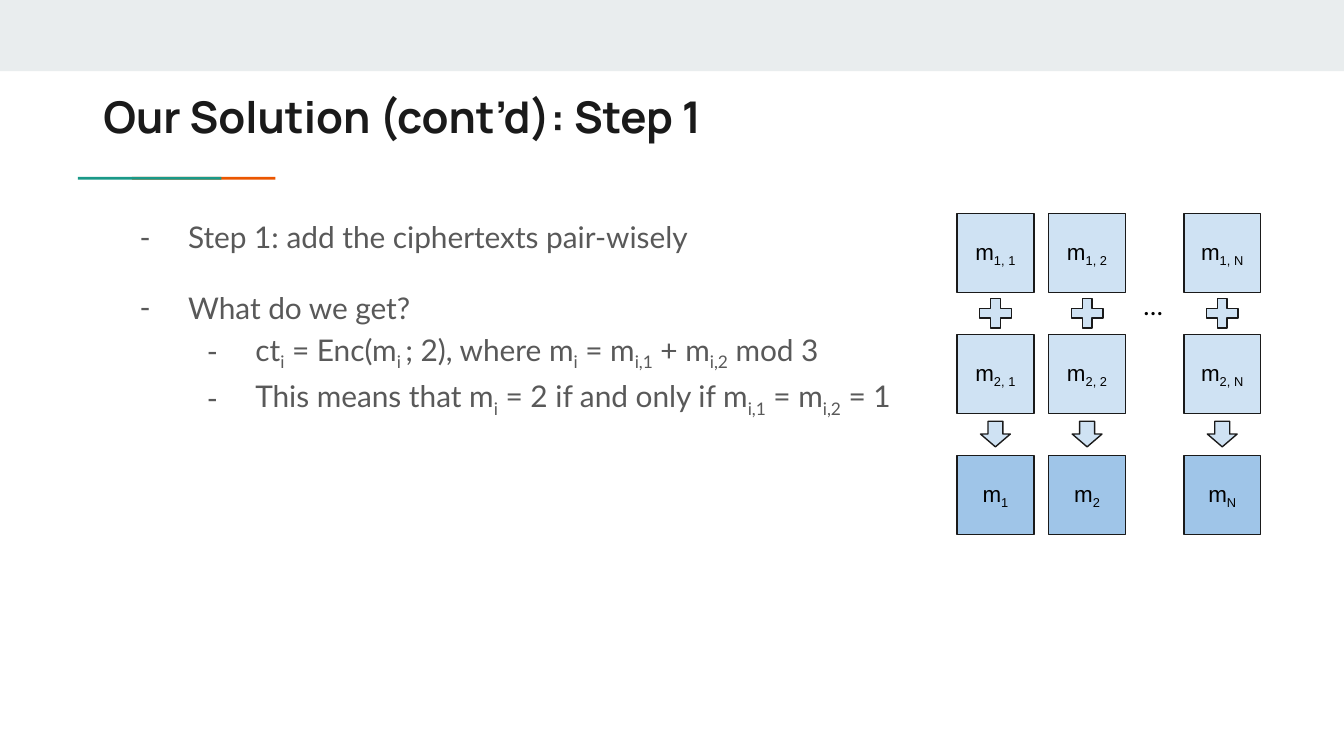
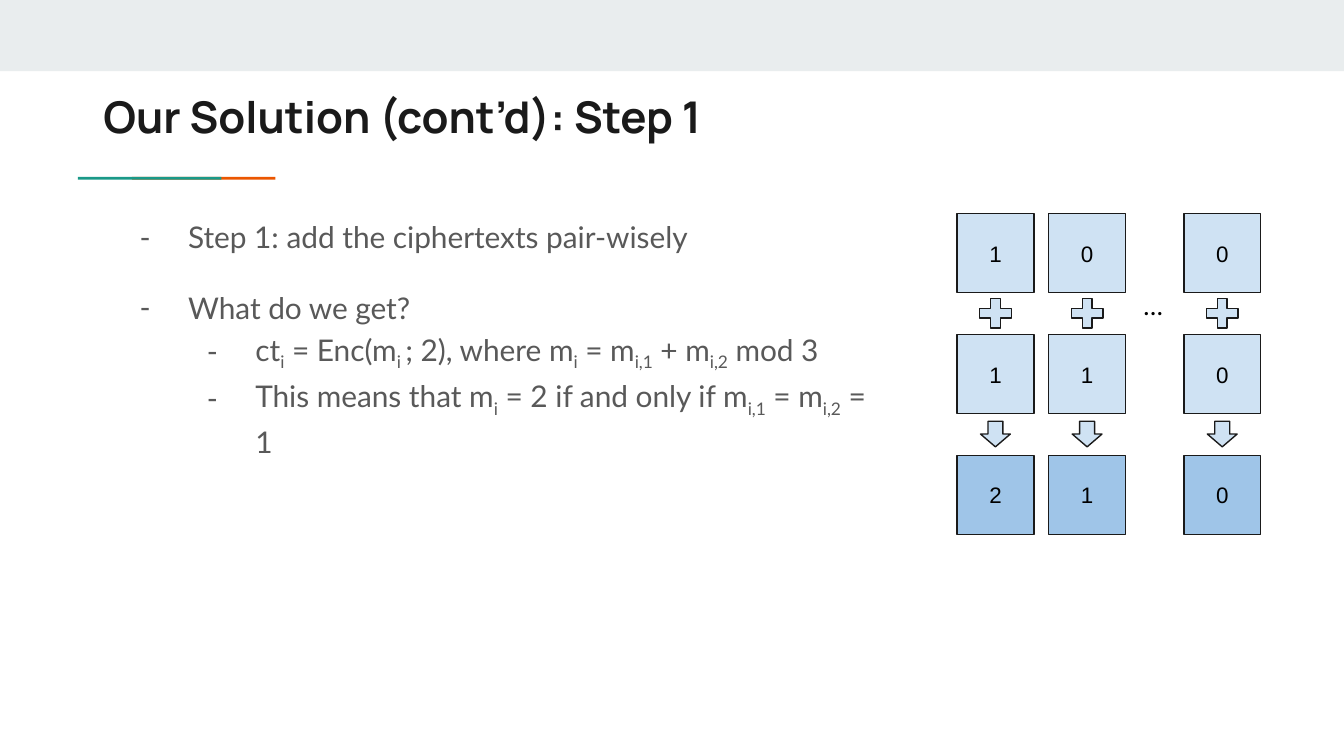
"""Builds two slides that explain pair-wise addition of ciphertexts."""
from dataclasses import dataclass
from typing import NamedTuple

from lxml.etree import SubElement
from pptx import Presentation
from pptx.dml.color import RGBColor
from pptx.enum.shapes import MSO_SHAPE
from pptx.enum.text import MSO_ANCHOR, MSO_AUTO_SIZE, PP_ALIGN
from pptx.oxml.ns import qn
from pptx.shapes.autoshape import Shape
from pptx.slide import Slide
from pptx.text.text import TextFrame, _Paragraph
from pptx.util import Pt


class TextStyle(NamedTuple):
    font: str
    size: float
    color: RGBColor
    bold: bool = False


class Box(NamedTuple):
    left: float
    top: float
    width: float
    height: float


class Bar(NamedTuple):
    box: Box
    fill: RGBColor


class Bullet(NamedTuple):
    text: str
    level: int = 0


class Operator(NamedTuple):
    kind: MSO_SHAPE
    top: float
    width: float
    height: float
    adjustments: tuple[float, ...]


class StepSlide(NamedTuple):
    answer_width: float
    rows: tuple[tuple[str, ...], ...]


@dataclass(frozen=True)
class Theme:
    ink: RGBColor = RGBColor(0x1A, 0x1A, 0x1A)
    band: RGBColor = RGBColor(0xE9, 0xED, 0xEE)
    orange: RGBColor = RGBColor(0xEB, 0x56, 0x00)
    teal: RGBColor = RGBColor(0x1A, 0x99, 0x88)
    input_fill: RGBColor = RGBColor(0xCF, 0xE2, 0xF3)
    sum_fill: RGBColor = RGBColor(0x9F, 0xC5, 0xE8)
    title: TextStyle = TextStyle("Manrope", 23.4, RGBColor(0x1A, 0x1A, 0x1A), True)
    body: TextStyle = TextStyle("Lato", 16, RGBColor(0x59, 0x59, 0x59))
    cell: TextStyle = TextStyle("Arial", 12, RGBColor(0, 0, 0))
    ellipsis: TextStyle = TextStyle("Lato", 14, RGBColor(0, 0, 0))
    outline: float = 0.75
    inset: float = 7.2
    bullet_step: float = 36
    bullet_hang: float = 26


THEME = Theme()

BARS = (
    Bar(Box(0, 0, 720, 38.2), THEME.band),
    Bar(Box(70.6, 94.7, 77, 1.5), THEME.orange),
    Bar(Box(41.7, 94.7, 77, 1.5), THEME.teal),
)

TITLE = "Our Solution (cont’d): Step 1"
TITLE_BOX = Box(48.2, 41, 605.5, 42.5)
STEP_BOX = Box(57.6, 107.3, 360.7, 49.7)
STEP = (Bullet("Step 1: add the ciphertexts pair-wisely"),)
ANSWER = (
    Bullet("What do we get?"),
    Bullet("ct|i| = Enc(m|i |; 2), where m|i| = m|i,1| + m|i,2| mod 3", 1),
    Bullet("This means that m|i| = 2 if and only if m|i,1| = m|i,2| = 1", 1),
)

COLUMN_LEFTS = (512.7, 561.8, 634.2)
ROW_TOP, ROW_PITCH = 114.5, 64.8
CELL_WIDTH, CELL_HEIGHT = 41.2, 42.2
ROW_FILLS = (THEME.input_fill, THEME.input_fill, THEME.sum_fill)
OPERATORS = (
    Operator(MSO_SHAPE.MATH_PLUS, 157.1, 23, 21.6, (0.235,)),
    Operator(MSO_SHAPE.DOWN_ARROW, 225.7, 16, 13.7, (0.5, 0.5)),
)
ELLIPSIS_BOX = Box(605.5, 147.6, 25.9, 31.7)

SLIDES = (
    StepSlide(
        605.5,
        (
            ("m|1, 1", "m|1, 2", "m|1, N"),
            ("m|2, 1", "m|2, 2", "m|2, N"),
            ("m|1", "m|2", "m|N"),
        ),
    ),
    StepSlide(424.1, (("1", "0", "0"), ("1", "1", "0"), ("2", "1", "0"))),
)


def points(box: Box) -> tuple[Pt, ...]:
    """Convert a box to lengths in points."""
    return tuple(Pt(length) for length in box)


def write(paragraph: _Paragraph, text: str, style: TextStyle) -> None:
    """Add runs, where every second part between bars is a subscript."""
    for position, part in enumerate(text.split("|")):
        run = paragraph.add_run()
        run.text = part
        run.font.name = style.font
        run.font.size = Pt(style.size)
        run.font.bold = style.bold
        run.font.color.rgb = style.color
        if position % 2:
            run.font._element.set("baseline", "-25000")


def prepare(frame: TextFrame, anchor: MSO_ANCHOR = MSO_ANCHOR.TOP) -> None:
    """Give a text frame the shared insets, wrapping and anchor."""
    frame.word_wrap = True
    frame.auto_size = MSO_AUTO_SIZE.NONE
    frame.vertical_anchor = anchor
    frame.margin_left = frame.margin_right = Pt(THEME.inset)
    frame.margin_top = frame.margin_bottom = Pt(THEME.inset)


def place(shape: Shape, box: Box) -> None:
    """Move a placeholder to a box and prepare its text."""
    shape.left, shape.top, shape.width, shape.height = points(box)
    prepare(shape.text_frame)


def add_dash(paragraph: _Paragraph, level: int) -> None:
    """Set the dash bullet and the hanging indent of a list level."""
    properties = paragraph._p.get_or_add_pPr()
    properties.set("marL", str(Pt(THEME.bullet_step * (level + 1))))
    properties.set("indent", str(-Pt(THEME.bullet_hang)))
    color = SubElement(properties, qn("a:buClr"))
    SubElement(color, qn("a:srgbClr"), val=str(THEME.body.color))
    SubElement(properties, qn("a:buFont"), typeface=THEME.body.font)
    SubElement(properties, qn("a:buChar"), char="-")


def fill_list(shape: Shape, box: Box, bullets: tuple[Bullet, ...]) -> None:
    """Write a dashed list into a body placeholder."""
    place(shape, box)
    frame = shape.text_frame
    for position, bullet in enumerate(bullets):
        paragraph = frame.add_paragraph() if position else frame.paragraphs[0]
        paragraph.level = bullet.level
        paragraph.line_spacing = 1.15
        paragraph.space_before = paragraph.space_after = Pt(0)
        add_dash(paragraph, bullet.level)
        write(paragraph, bullet.text, THEME.body)


def add_block(
    slide: Slide, kind: MSO_SHAPE, box: Box, fill: RGBColor, outlined: bool = True
) -> Shape:
    """Draw a flat filled shape."""
    block = slide.shapes.add_shape(kind, *points(box))
    block.shadow.inherit = False
    block.fill.solid()
    block.fill.fore_color.rgb = fill
    if outlined:
        block.line.color.rgb = THEME.ink
        block.line.width = Pt(THEME.outline)
    else:
        block.line.fill.background()
    return block


def add_cell(slide: Slide, box: Box, fill: RGBColor, label: str) -> None:
    """Draw one labelled message square."""
    frame = add_block(slide, MSO_SHAPE.RECTANGLE, box, fill).text_frame
    prepare(frame, MSO_ANCHOR.MIDDLE)
    frame.paragraphs[0].alignment = PP_ALIGN.CENTER
    write(frame.paragraphs[0], label, THEME.cell)


def add_sum_grid(slide: Slide, rows: tuple[tuple[str, ...], ...]) -> None:
    """Draw the columns of added messages with their operators."""
    for row, (labels, fill) in enumerate(zip(rows, ROW_FILLS)):
        top = ROW_TOP + row * ROW_PITCH
        for left, label in zip(COLUMN_LEFTS, labels):
            add_cell(slide, Box(left, top, CELL_WIDTH, CELL_HEIGHT), fill, label)
    for operator in OPERATORS:
        for left in COLUMN_LEFTS:
            inset = (CELL_WIDTH - operator.width) / 2
            box = Box(left + inset, operator.top, operator.width, operator.height)
            sign = add_block(slide, operator.kind, box, THEME.input_fill)
            for index, value in enumerate(operator.adjustments):
                sign.adjustments[index] = value
    ellipsis = slide.shapes.add_textbox(*points(ELLIPSIS_BOX)).text_frame
    prepare(ellipsis)
    write(ellipsis.paragraphs[0], "…", THEME.ellipsis)


def add_step_slide(presentation: Presentation, content: StepSlide) -> None:
    """Build one slide of the step."""
    slide = presentation.slides.add_slide(presentation.slide_layouts[3])
    for bar in BARS:
        add_block(slide, MSO_SHAPE.RECTANGLE, bar.box, bar.fill, outlined=False)
    title, step, answer = slide.placeholders
    place(title, TITLE_BOX)
    heading = title.text_frame.paragraphs[0]
    heading.alignment = PP_ALIGN.LEFT
    write(heading, TITLE, THEME.title)
    fill_list(step, STEP_BOX, STEP)
    fill_list(answer, Box(57.6, 144.9, content.answer_width, 121.7), ANSWER)
    add_sum_grid(slide, content.rows)


def main() -> None:
    """Build and save the presentation."""
    presentation = Presentation()
    presentation.slide_width, presentation.slide_height = Pt(720), Pt(405)
    for content in SLIDES:
        add_step_slide(presentation, content)
    presentation.save("out.pptx")


if __name__ == "__main__":
    main()
